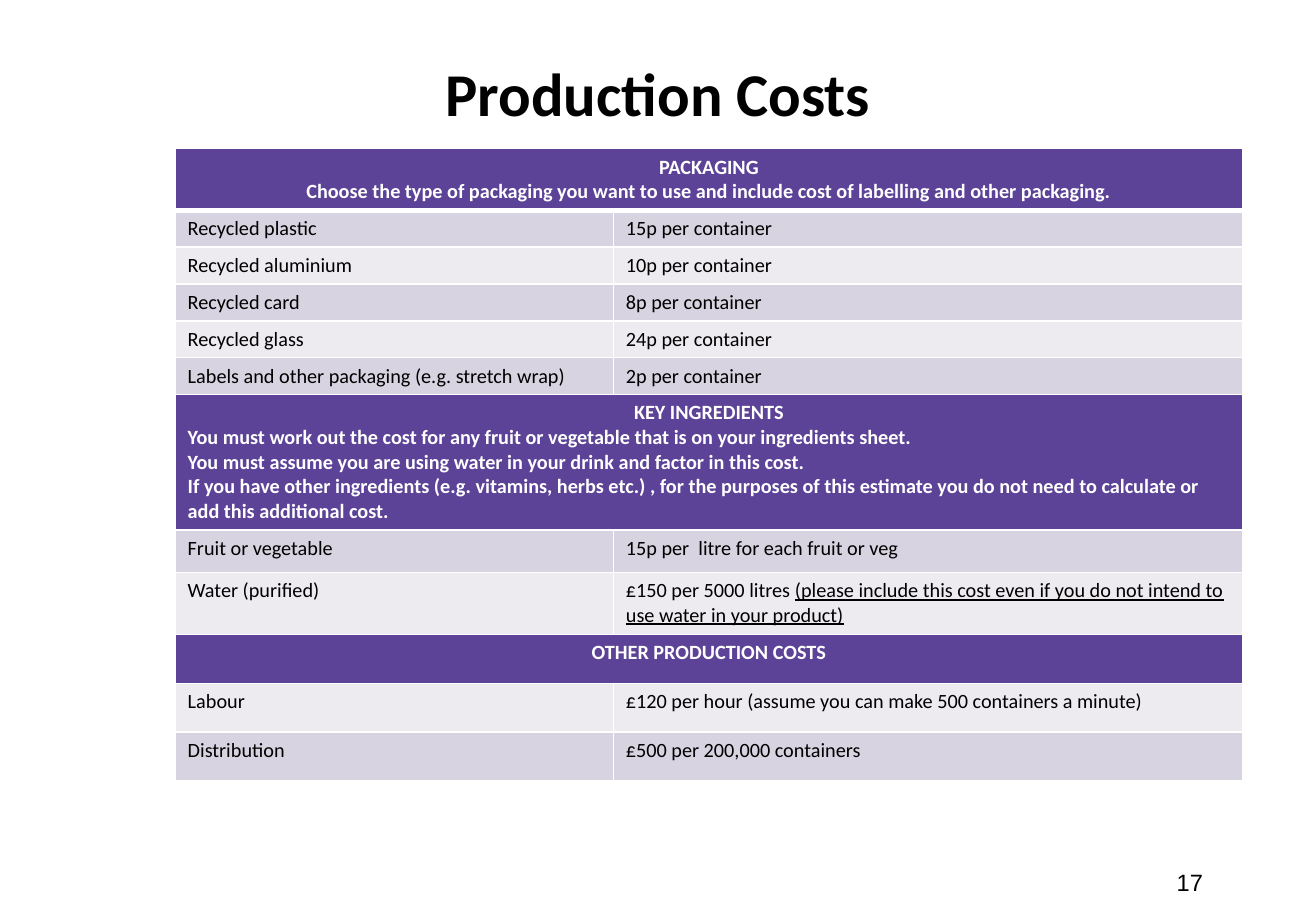
from lxml import etree
from pptx import Presentation
from pptx.dml.color import RGBColor
from pptx.enum import text
from pptx.oxml import ns
from pptx.util import Cm, Pt

PURPLE, DARK, LIGHT = "5C4397", "D8D3E0", "EDEAF0"
WHITE, BLACK = "FFFFFF", "000000"
LEFT, MID = text.PP_ALIGN.LEFT, text.PP_ALIGN.CENTER
RIGHT = text.PP_ALIGN.RIGHT

# Row height in cm, then the cell texts; a single text is a section heading
ROWS = [
    (1.27, "PACKAGING\nChoose the type of packaging you want to use and "
           "include cost of labelling and other packaging."),
    (0.77, "Recycled plastic", "15p per container"),
    (0.77, "Recycled aluminium", "10p per container"),
    (0.77, "Recycled card", "8p per container"),
    (0.77, "Recycled glass", "24p per container"),
    (0.77, "Labels and other packaging (e.g. stretch wrap)",
     "2p per container"),
    (2.82, "KEY INGREDIENTS\n"
           "You must work out the cost for any fruit or vegetable that is on "
           "your ingredients sheet.\n"
           "You must assume you are using water in your drink and factor in "
           "this cost.\n"
           "If you have other ingredients (e.g. vitamins, herbs etc.) , for "
           "the purposes of this estimate you do not need to calculate or add "
           "this additional cost."),
    (0.88, "Fruit or vegetable", "15p per  litre for each fruit or veg"),
    (1.3, "Water (purified)", "£150 per 5000 litres "),
    (1.02, "OTHER PRODUCTION COSTS"),
    (1.02, "Labour",
     "£120 per hour (assume you can make 500 containers a minute)"),
    (1.02, "Distribution", "£500 per 200,000 containers"),
]
WATER = 8
NOTE = ("(please include this cost even if you do not intend to use water "
        "in your product)")


def rgb(code):
    return RGBColor.from_string(code)


def style(para, size, color, bold=False, align=LEFT, face="Calibri"):
    para.alignment = align
    font = para.font
    font.name, font.size, font.bold = face, Pt(size), bold
    font.color.rgb = rgb(color)


def edge(cell, side, width):
    props = cell._tc.get_or_add_tcPr()
    line = etree.SubElement(props, ns.qn("a:" + side), w=str(Pt(width)))
    fill = etree.SubElement(line, ns.qn("a:solidFill"))
    etree.SubElement(fill, ns.qn("a:srgbClr"), val=WHITE)


def paint(cell, words, row, head):
    # The line below the first row is thicker
    widths = {"lnL": 1, "lnR": 1, "lnT": 3 if row == 1 else 1,
              "lnB": 3 if row == 0 else 1}
    for side, width in widths.items():
        edge(cell, side, width)
    cell.fill.solid()
    cell.fill.fore_color.rgb = rgb(
        PURPLE if head else DARK if row % 2 else LIGHT)
    cell.text = words
    for i, para in enumerate(cell.text_frame.paragraphs):
        mid = head and (i == 0 or row == 0)
        style(para, 12, WHITE if head else BLACK, head, MID if mid else LEFT)


def add_title(slide, words):
    title = slide.shapes.title
    title.left, title.top = Cm(1.37), Cm(1.04)
    title.width, title.height = Cm(24.77), Cm(3.48)
    title.text = words
    title.text_frame.vertical_anchor = text.MSO_ANCHOR.TOP
    style(title.text_frame.paragraphs[0], 36, BLACK, True, MID)


def add_costs(slide):
    high = sum(row[0] for row in ROWS)
    table = slide.shapes.add_table(
        len(ROWS), 2, Cm(3.67), Cm(3.11), Cm(22.3), Cm(high)).table
    table.first_row = table.horz_banding = False
    for col, width in zip(table.columns, (9.16, 13.14)):
        col.width = Cm(width)
    for r, (height, *cells) in enumerate(ROWS):
        table.rows[r].height = Cm(height)
        head = len(cells) == 1
        if head:
            table.cell(r, 0).merge(table.cell(r, 1))
        for c, words in enumerate(cells):
            paint(table.cell(r, c), words, r, head)
    run = table.cell(WATER, 1).text_frame.paragraphs[0].add_run()
    run.text, run.font.underline = NOTE, True


def add_number(slide, words):
    box = slide.shapes.add_textbox(Cm(18.97), Cm(18.03), Cm(6.43), Cm(1.02))
    frame = box.text_frame
    frame.word_wrap = True
    frame.text = words
    style(frame.paragraphs[0], 14, BLACK, align=RIGHT, face="Arial")


def main():
    deck = Presentation()
    deck.slide_width, deck.slide_height = Cm(27.51), Cm(19.05)
    slide = deck.slides.add_slide(deck.slide_layouts[5])
    add_title(slide, "Production Costs")
    add_costs(slide)
    add_number(slide, "17")
    deck.save("out.pptx")


if __name__ == "__main__":
    main()
